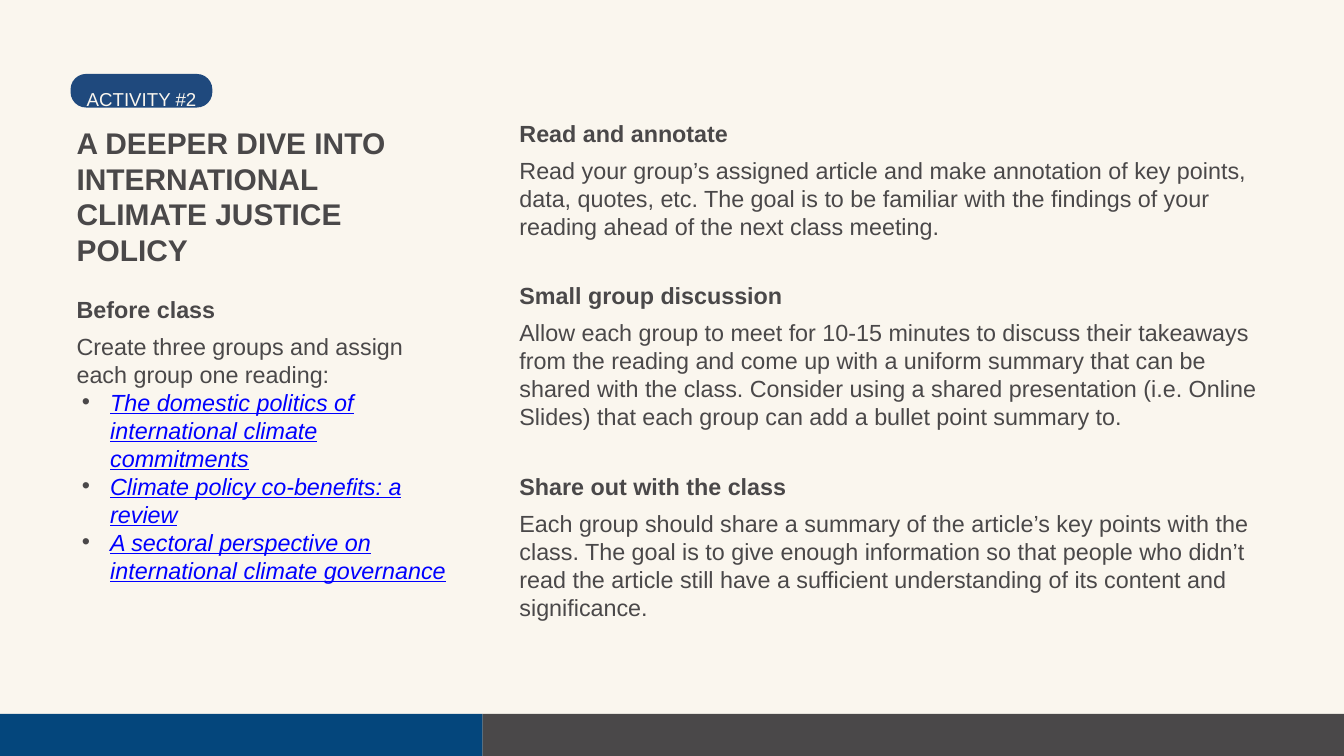
import pptx
import pptx.util
import pptx.dml.color
import pptx.enum.shapes
import lxml.etree

theme = {
    "font": "Arial",
    "page": "FAF6EE", "ink": "4A4849", "blue": "04467C", "chip": "1F497D", "link": "0000FF",
    "title": 32, "text": 25, "label": 20,
    "lead": 1.2,  # line pitch as a multiple of the type size
}

deck = pptx.Presentation()
deck.slide_width = pptx.util.Inches(20)
deck.slide_height = pptx.util.Inches(11.25)
slide = deck.slides.add_slide(deck.slide_layouts[6])

# Grid of 100 columns by 100 rows
col = deck.slide_width / 100
row = deck.slide_height / 100
line = 3.73  # rows taken by one line of body text
left, right = 5.7, 38.65
slim, wide = 28.3, 55.75
seam, foot = 35.9, 94.44

shade = pptx.dml.color.RGBColor.from_string
kinds = pptx.enum.shapes.MSO_SHAPE


def add_block(kind, x, y, w, h, fill):
    block = slide.shapes.add_shape(
        kind, round(x * col), round(y * row), round(w * col), round(h * row))
    block.shadow.inherit = False
    block.fill.solid()
    block.fill.fore_color.rgb = shade(theme[fill])
    block.line.fill.background()
    return block


def add_text(x, y, w, h, lines, size="text", tint="ink", bold=False, space=None):
    box = slide.shapes.add_textbox(
        round(x * col), round(y * row), round(w * col), round(h * row))
    frame = box.text_frame
    frame.word_wrap = True
    frame.margin_left = frame.margin_right = frame.margin_top = frame.margin_bottom = 0
    for n, words in enumerate(lines):
        para = frame.paragraphs[0] if n == 0 else frame.add_paragraph()
        para.line_spacing = space or pptx.util.Pt(theme[size] * theme["lead"])
        run = para.add_run()
        run.text = words
        run.font.name = theme["font"]
        run.font.size = pptx.util.Pt(theme[size])
        run.font.bold = bold
        run.font.color.rgb = shade(theme[tint])
    return frame


# Page and footer bands
slide.background.fill.solid()
slide.background.fill.fore_color.rgb = shade(theme["page"])
add_block(kinds.RECTANGLE, seam, foot, 100 - seam, 100 - foot, "ink")
add_block(kinds.RECTANGLE, 0, foot, seam, 100 - foot, "blue")

# Activity chip
chip = add_block(kinds.ROUNDED_RECTANGLE, 5.25, 9.78, 10.55, 4.44, "chip")
chip.adjustments[0] = 0.46
add_text(6.45, 10.49, 46.65, 3.02, ["ACTIVITY #2"], "label", "page", space=1.4)

# Title
add_text(left, 16.44, 23.25, 19.11,
         ["A DEEPER DIVE INTO INTERNATIONAL CLIMATE JUSTICE POLICY"], "title", bold=True)

# Sections: column, top row, width, lines of text, heading, paragraphs
parts = [
    (left, 39.02, slim, 9, "Before class", [
        "Create three groups and assign each group one reading:",
        "The domestic politics of international climate commitments",
        "Climate policy co-benefits: a review",
        "A sectoral perspective on international climate governance"]),
    (right, 15.82, wide, 3, "Read and annotate", [
        "Read your group’s assigned article and make annotation of key points, data, quotes, "
        "etc. The goal is to be familiar with the findings of your reading ahead of the next "
        "class meeting."]),
    (right, 37.24, wide, 4, "Small group discussion", [
        "Allow each group to meet for 10-15 minutes to discuss their takeaways from the reading "
        "and come up with a uniform summary that can be shared with the class. Consider using a "
        "shared presentation (i.e. Online Slides) that each group can add a bullet point summary "
        "to."]),
    (right, 62.4, wide, 4, "Share out with the class", [
        "Each group should share a summary of the article’s key points with the class. The goal "
        "is to give enough information so that people who didn’t read the article still have a "
        "sufficient understanding of its content and significance."]),
]
for x, y, w, count, head, body in parts:
    add_text(x, y, w, line, [head], bold=True)
    frame = add_text(x, y + 4.89, w, count * line, body)

    # Every paragraph after the first is a bulleted reading
    for para in frame.paragraphs[1:]:
        para.level = 1
        props = para._p.get_or_add_pPr()
        props.set("marL", str(round(2.5 * col)))
        props.set("indent", str(round(-2.1 * col)))
        space = "{" + props.nsmap["a"] + "}"
        tone = lxml.etree.SubElement(props, space + "buClr")
        lxml.etree.SubElement(tone, space + "srgbClr", val=theme["ink"])
        lxml.etree.SubElement(props, space + "buFont", typeface=theme["font"])
        lxml.etree.SubElement(props, space + "buChar", char="•")
        font = para.runs[0].font
        font.italic = font.underline = True
        font.color.rgb = shade(theme["link"])

deck.save("out.pptx")
